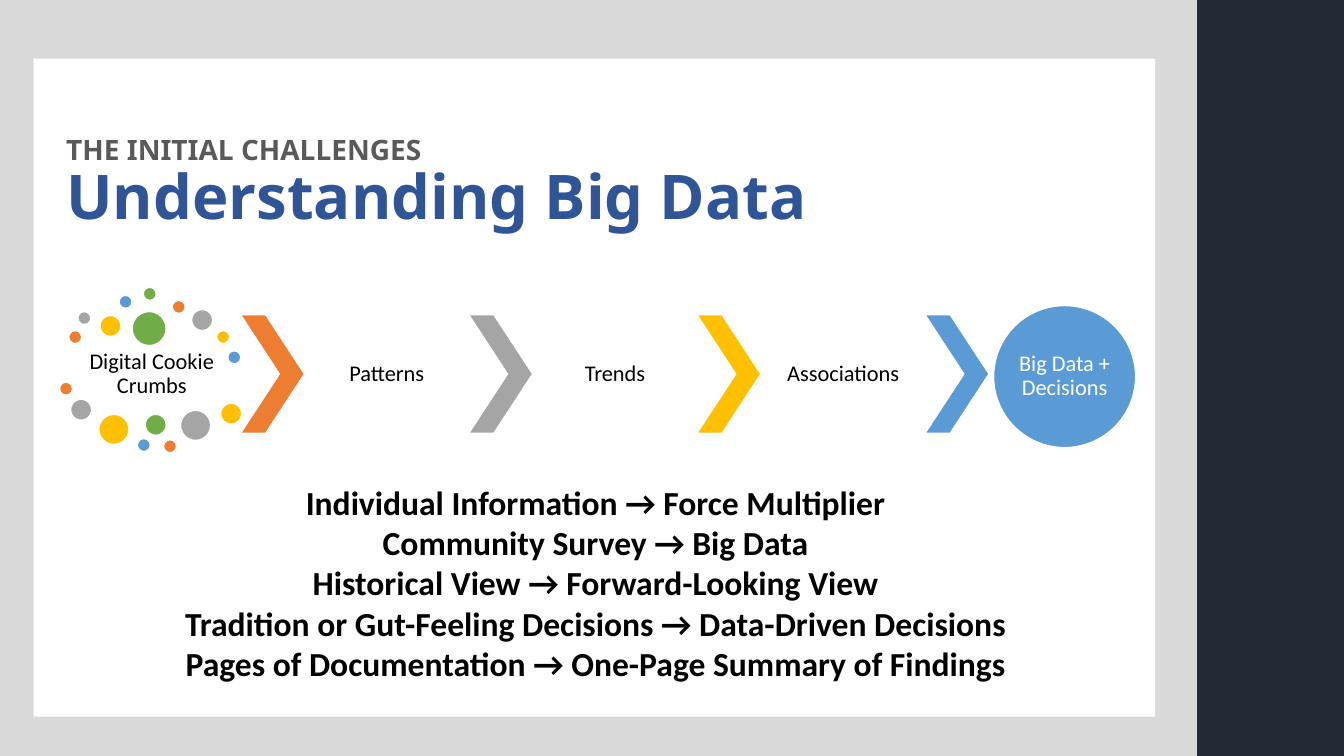
from itertools import cycle

from pptx import Presentation
from pptx.dml.color import RGBColor
from pptx.enum.shapes import MSO_SHAPE as Shape
from pptx.enum.text import MSO_ANCHOR as Anchor, PP_ALIGN as Align
from pptx.util import Cm, Pt

COLORS = {
    "white": "FFFFFF", "black": "000000", "backdrop": "D9D9D9", "navy": "222A35",
    "orange": "ED7D31", "gray": "A5A5A5", "gold": "FFC000", "blue": "5B9BD5",
    "green": "70AD47", "kicker": "595959", "title": "2F5597",
}
ACCENTS = ["orange", "gray", "gold", "blue", "green"]
STAGES = ["Patterns", "Trends", "Associations"]
# Left, top and diameter of each crumb in cm, inside the crumb area
CRUMBS = [
    (0.23, 1.09, 0.33), (0.46, 0.61, 0.33), (1.02, 0.71, 0.53),
    (1.5, 0.2, 0.33), (2.11, 0, 0.33), (2.84, 0.33, 0.33),
    (3.33, 0.56, 0.53), (3.96, 1.09, 0.33), (4.24, 1.6, 0.33),
    (1.83, 0.61, 0.86), (0, 2.39, 0.33), (0.28, 2.82, 0.53),
    (0.99, 3.2, 0.76), (1.96, 3.81, 0.33), (2.16, 3.2, 0.53),
    (2.62, 3.84, 0.33), (3.05, 3.1, 0.76), (4.06, 2.92, 0.53),
]
SHIFTS = [
    "Individual Information → Force Multiplier",
    "Community Survey → Big Data",
    "Historical View → Forward-Looking View",
    "Tradition or Gut-Feeling Decisions → Data-Driven Decisions",
    "Pages of Documentation → One-Page Summary of Findings",
]


def rgb(name):
    return RGBColor.from_string(COLORS[name])


def add_solid(page, kind, left, top, width, height, color, outlined=False):
    shape = page.shapes.add_shape(kind, Cm(left), Cm(top), Cm(width), Cm(height))
    shape.shadow.inherit = False
    shape.fill.solid()
    shape.fill.fore_color.rgb = rgb(color)
    if outlined:
        shape.line.color.rgb = rgb("white")
        shape.line.width = Pt(1)
    else:
        shape.line.fill.background()
    return shape


def set_font(font, name, size, color, bold=False):
    font.name, font.size, font.bold = name, Pt(size), bold
    font.color.rgb = rgb(color)


def add_text_box(page, left, top, width, height):
    box = page.shapes.add_textbox(Cm(left), Cm(top), Cm(width), Cm(height))
    box.text_frame.word_wrap = True
    return box.text_frame


def fill_label(frame, text, color, inset):
    frame.word_wrap = True
    frame.vertical_anchor = Anchor.MIDDLE
    frame.margin_left = frame.margin_right = Cm(inset)
    frame.margin_top = frame.margin_bottom = Cm(inset)
    para = frame.paragraphs[0]
    para.text = text
    para.alignment = Align.CENTER
    para.line_spacing = 0.9
    set_font(para.font, "Calibri", 16, color)


def add_backdrop(page):
    add_solid(page, Shape.RECTANGLE, 0, 0, 30.17, 19.05, "backdrop")
    add_solid(page, Shape.RECTANGLE, 0.85, 1.48, 28.26, 16.58, "white")
    add_solid(page, Shape.RECTANGLE, 30.17, 0, 3.7, 19.05, "navy")


def add_title(page, left, top, width, height):
    frame = add_text_box(page, left, top, width, height)
    frame.vertical_anchor = Anchor.MIDDLE
    para = frame.paragraphs[0]
    para.line_spacing = 0.9
    kicker = para.add_run()
    kicker.text = "THE INITIAL CHALLENGES"
    set_font(kicker.font, "Noto Sans", 20, "kicker", True)
    para.add_line_break()
    heading = para.add_run()
    heading.text = "Understanding Big Data"
    set_font(heading.font, "Noto Sans", 44, "title", True)


def add_crumbs(page, left, top):
    label = add_text_box(page, left + 0.23, top + 1.5, 4.19, 1.4)
    fill_label(label, "Digital Cookie Crumbs", "black", 0.05)
    for (x, y, size), color in zip(CRUMBS, cycle(ACCENTS)):
        add_solid(page, Shape.OVAL, left + x, top + y, size, size, color, True)


def add_stages(page, left, top, height):
    arrow_width, label_width = 1.55, 4.2
    for index, color in enumerate(ACCENTS[:len(STAGES) + 1]):
        x = left + index * (arrow_width + label_width)
        arrow = add_solid(page, Shape.CHEVRON, x, top, arrow_width, height, color)
        arrow.adjustments[0] = 0.623
        if index < len(STAGES):
            label = add_text_box(page, x + arrow_width, top, label_width, height)
            fill_label(label, STAGES[index], "black", 0.05)


def add_outcome(page, left, top, size):
    circle = add_solid(page, Shape.OVAL, left, top, size, size, "blue", True)
    fill_label(circle.text_frame, "Big Data + Decisions", "white", 0)


def add_shifts(page, left, top, width, height):
    frame = add_text_box(page, left, top, width, height)
    for index, text in enumerate(SHIFTS):
        para = frame.add_paragraph() if index else frame.paragraphs[0]
        para.text = text
        para.alignment = Align.CENTER
        set_font(para.font, "Calibri", 24, "black", True)


def main():
    deck = Presentation()
    deck.slide_width, deck.slide_height = Cm(33.87), Cm(19.05)
    page = deck.slides.add_slide(deck.slide_layouts[6])
    add_backdrop(page)
    # Process from crumbs to decisions
    add_crumbs(page, 1.5, 7.24)
    add_stages(page, 6.1, 7.95, 2.95)
    add_outcome(page, 25.04, 7.7, 3.58)
    # Title and list of shifts
    add_title(page, 1.42, 3.05, 26.77, 3.2)
    add_shifts(page, 4.09, 12.01, 21.84, 5.38)
    deck.save("out.pptx")


if __name__ == "__main__":
    main()
